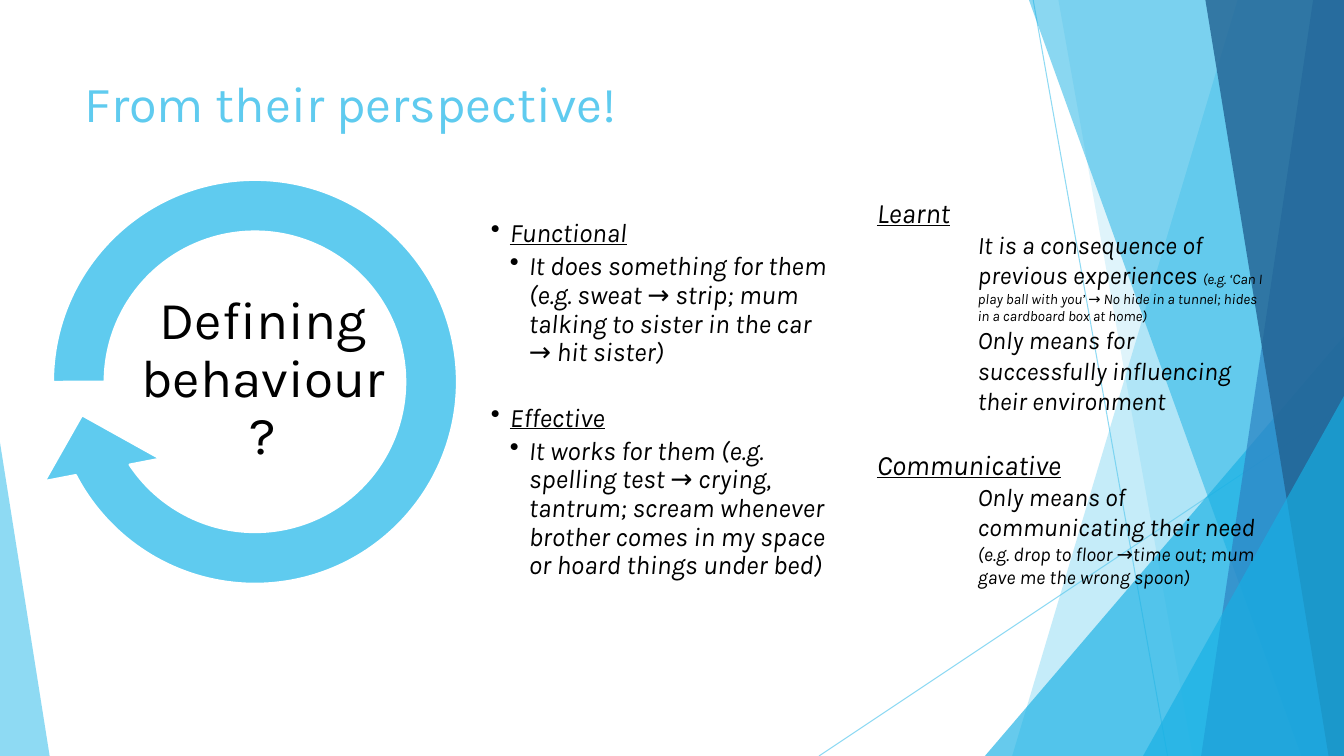
from lxml.etree import SubElement
from pptx import Presentation
from pptx.dml.color import RGBColor
from pptx.enum.shapes import MSO_CONNECTOR, MSO_SHAPE
from pptx.enum.text import MSO_ANCHOR, PP_ALIGN
from pptx.oxml.ns import qn
from pptx.util import Pt

FONT = "Karla"
SKY = RGBColor(0x5F, 0xCB, 0xEF)
CYAN = RGBColor(0x17, 0xB0, 0xE4)
BLUE = RGBColor(0x2E, 0x83, 0xC3)
NAVY = RGBColor(0x22, 0x62, 0x92)
WHITE = RGBColor(0xFF, 0xFF, 0xFF)
BLACK = RGBColor(0, 0, 0)
WIDTH, HEIGHT = 960, 540

# Each band: left edge at the top, left edge at the bottom, colour, opacity
BANDS_BEHIND = [(884, 723, SKY, 36), (756, 852, SKY, 20)]
BANDS_IN_FRONT = [(735, 929.5, CYAN, 50), (938, 858, BLUE, 70), (861, 949, NAVY, 80)]

# Each paragraph: level, gap before, runs of (text, size)
FUNCTIONAL_EFFECTIVE = [
    (0, 0, [("Functional", 19)]),
    (1, 0, [("It does something for them (e.g. sweat → strip; mum talking to "
             "sister in the car → hit sister)", 19)]),
    (0, 23, [("Effective", 19)]),
    (1, 0, [("It works for them (e.g. spelling test → crying, tantrum; scream "
             "whenever brother comes in my space or hoard things under bed)", 19)]),
]
LEARNT_COMMUNICATIVE = [
    (0, 0, [("Learnt", 20)]),
    (1, 0, [("It is a consequence of previous experiences ", 18),
            ("(e.g. ‘Can I play ball with you’ → No hide in a tunnel; hides in a "
             "cardboard box at home)", 10.5)]),
    (1, 0, [("Only means for successfully influencing their environment", 18)]),
    (0, 23, [("Communicative", 20)]),
    (1, 0, [("Only means of communicating their need ", 18),
            ("(e.g. drop to floor →time out; mum gave me the wrong spoon)", 14)]),
]


def set_opacity(fill_format, percent):
    color = fill_format._xPr.find(qn("a:solidFill"))[0]
    SubElement(color, qn("a:alpha")).set("val", str(percent * 1000))


def paint(sp, color, opacity):
    sp.shadow.inherit = False
    sp.fill.solid()
    sp.fill.fore_color.rgb = color
    set_opacity(sp.fill, opacity)
    sp.line.fill.background()


def add_band(s, top_x, bottom_x, color, opacity):
    """Fill the slide from a slanted left edge to its right side."""
    builder = s.shapes.build_freeform(Pt(top_x), 0)
    corners = [(WIDTH, 0), (WIDTH, HEIGHT), (bottom_x, HEIGHT)]
    builder.add_line_segments([(Pt(x), Pt(y)) for x, y in corners])
    paint(builder.convert_to_shape(), color, opacity)


def add_corner(s, left, width, height, apex, color, opacity):
    """Stand a triangle on the bottom edge of the slide."""
    sp = s.shapes.add_shape(MSO_SHAPE.ISOSCELES_TRIANGLE, Pt(left),
                            Pt(HEIGHT - height), Pt(width), Pt(height))
    sp.adjustments[0] = apex
    paint(sp, color, opacity)


def add_thin_line(s, x1, y1, x2, y2):
    line = s.shapes.add_connector(MSO_CONNECTOR.STRAIGHT, Pt(x1), Pt(y1), Pt(x2), Pt(y2))
    line.line.width = Pt(0.75)
    line.line.color.rgb = SKY
    set_opacity(line.line.fill, 70)
    SubElement(line._element.spPr, qn("a:effectLst"))


def add_backdrop(s):
    add_thin_line(s, 738, 0, 834, HEIGHT)
    add_thin_line(s, WIDTH, 290, 585, HEIGHT)
    for band in BANDS_BEHIND:
        add_band(s, *band)
    add_corner(s, 703.5, 256.5, 300, 1, CYAN, 66)
    for band in BANDS_IN_FRONT:
        add_band(s, *band)
    add_corner(s, 816.5, 143.5, 257, 1, CYAN, 66)
    add_corner(s, 0, 35.5, 224, 0, SKY, 70)


def style_run(r, size, color=BLACK):
    r.font.name = FONT
    r.font.size = Pt(size)
    r.font.color.rgb = color


def set_title(s, text):
    title = s.shapes.title
    title.left, title.top, title.width, title.height = Pt(53.3), Pt(48), Pt(677), Pt(104)
    tf = title.text_frame
    tf.text = text
    tf.vertical_anchor = MSO_ANCHOR.TOP
    p = tf.paragraphs[0]
    p.alignment = PP_ALIGN.LEFT
    style_run(p.runs[0], 36, SKY)


def add_ring_arrow(s):
    sp = s.shapes.add_shape(MSO_SHAPE.CIRCULAR_ARROW, Pt(14.4), Pt(105), Pt(335.5), Pt(335.5))
    for i, value in enumerate([0.11, 11.423, 90, 108, 0.125]):
        sp.adjustments[i] = value
    sp.shadow.inherit = False
    sp.fill.solid()
    sp.fill.fore_color.rgb = SKY
    sp.line.color.rgb = WHITE
    sp.line.width = Pt(1.5)


def add_text_box(s, left, top, width, height, inset=None):
    """Return a wrapping text frame, centred vertically if an inset is given."""
    tf = s.shapes.add_textbox(Pt(left), Pt(top), Pt(width), Pt(height)).text_frame
    tf.word_wrap = True
    if inset is not None:
        tf.vertical_anchor = MSO_ANCHOR.MIDDLE
        tf.margin_left = tf.margin_right = tf.margin_top = tf.margin_bottom = Pt(inset)
    return tf


def add_ring_label(s, text):
    tf = add_text_box(s, 94.3, 224.6, 187.2, 93.6, inset=2)
    tf.text = text
    p = tf.paragraphs[0]
    p.alignment = PP_ALIGN.CENTER
    p.line_spacing = 0.9
    style_run(p.runs[0], 38)


def fill_outline(tf, outline, bulleted):
    """Write underlined headings with indented details below them."""
    for i, (level, gap, runs) in enumerate(outline):
        p = tf.add_paragraph() if i else tf.paragraphs[0]
        p.level = level
        p.space_before = Pt(gap)
        for text, size in runs:
            r = p.add_run()
            r.text = text
            style_run(r, size)
            r.font.italic = True
            r.font.underline = level == 0
        pPr = p._p.get_or_add_pPr()
        if bulleted:
            p.line_spacing = 0.9
            p.space_after = Pt(3)
            pPr.set("marL", str(Pt(13.5 * (level + 1))))
            pPr.set("indent", str(Pt(-13.5)))
            SubElement(pPr, qn("a:buChar")).set("char", "•")
        else:
            pPr.set("marL", str(Pt(72 * level)))
            pPr.set("indent", "0")


def main():
    prs = Presentation()
    prs.slide_width, prs.slide_height = Pt(WIDTH), Pt(HEIGHT)
    s = prs.slides.add_slide(prs.slide_layouts[5])
    add_backdrop(s)
    set_title(s, "From their perspective!")
    add_ring_arrow(s)
    add_ring_label(s, "Defining behaviour?")
    fill_outline(add_text_box(s, 349.2, 124.6, 251.3, 322.6, inset=1.5),
                 FUNCTIONAL_EFFECTIVE, bulleted=True)
    fill_outline(add_text_box(s, 619.2, 136, 291, 335.5),
                 LEARNT_COMMUNICATIVE, bulleted=False)
    prs.save("out.pptx")


if __name__ == "__main__":
    main()
